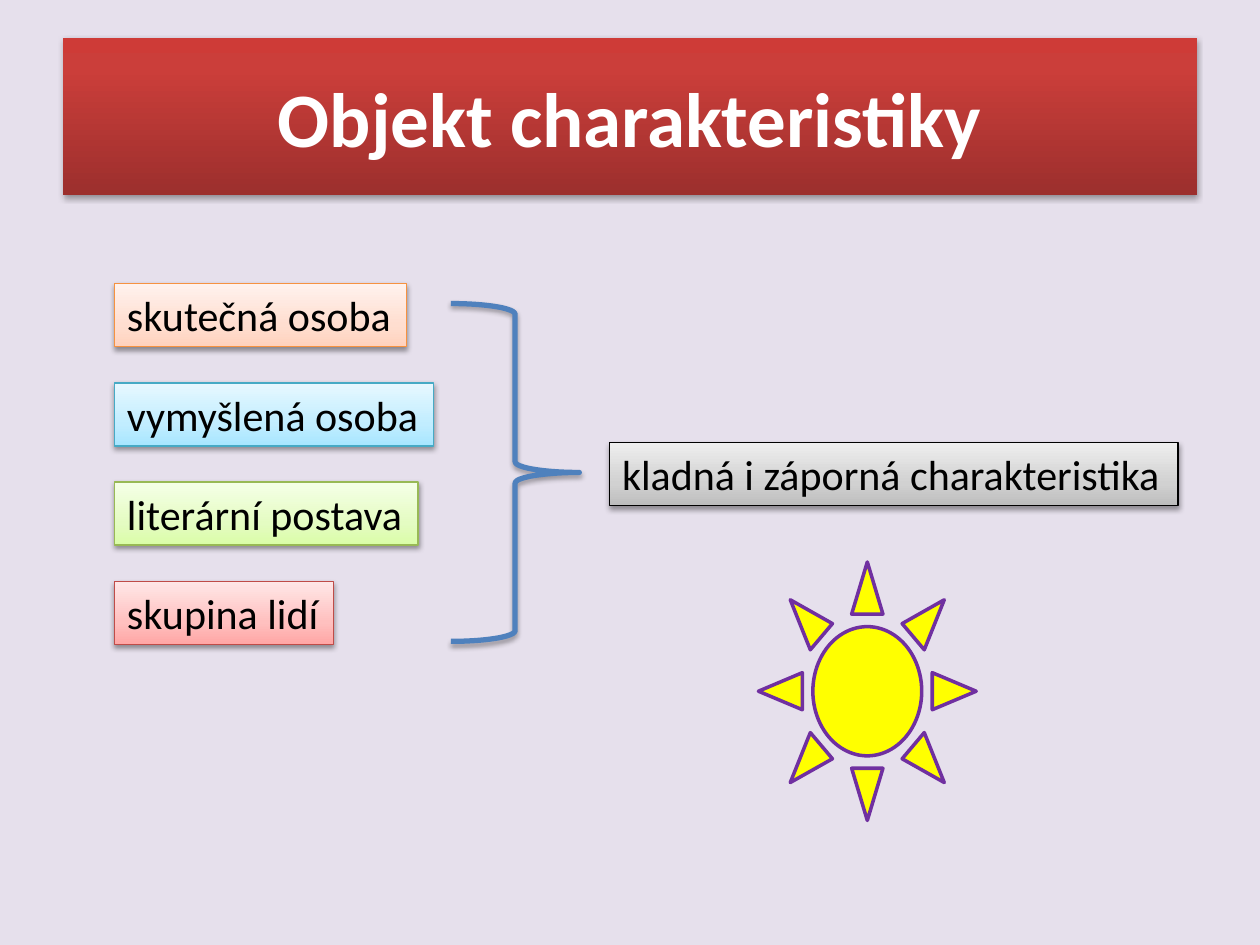
from dataclasses import dataclass

from lxml.etree import SubElement
from pptx import Presentation
from pptx.dml.color import RGBColor
from pptx.enum.shapes import MSO_SHAPE as SHAPE
from pptx.enum.text import MSO_ANCHOR as ANCHOR, MSO_AUTO_SIZE as AUTO, PP_ALIGN as ALIGN
from pptx.oxml.ns import qn
from pptx.util import Cm, Pt

LABEL_HEIGHT = 1.27
LABEL_LEFT, LABEL_TOP, LABEL_STEP = 2.31, 5.72, 2.0


@dataclass(frozen=True)
class Label:
    text: str
    width: float
    gradient: tuple[str, str, str]
    line: str


SUBJECTS = [
    Label("skutečná osoba", 5.89, ("FFD2BD", "FFDED0", "FFF2ED"), "F69240"),
    Label("vymyšlená osoba", 6.43, ("A7E6FF", "C1EDFF", "E7F8FF"), "46AAC5"),
    Label("literární postava", 6.12, ("DAFDA7", "E4FCC2", "F5FFE7"), "98B955"),
    Label("skupina lidí", 4.42, ("FFA6A5", "FFC0BF", "FFE7E7"), "BF4C48"),
]
CONCLUSION = Label("kladná i záporná charakteristika", 11.46,
                   ("BDBDBD", "D1D1D1", "EEEEEE"), "000000")


def rgb(value: str) -> RGBColor:
    return RGBColor.from_string(value)


def add_shape(s, kind, left: float, top: float, width: float, height: float,
              line: str | None = None, weight: float = 0.75):
    sp = s.shapes.add_shape(kind, Cm(left), Cm(top), Cm(width), Cm(height))
    sp.shadow.inherit = False
    if line:
        sp.line.color.rgb = rgb(line)
        sp.line.width = Pt(weight)
    else:
        sp.line.fill.background()
    return sp


def fill_gradient(sp, colors: tuple[str, str, str], middle: int) -> None:
    """Fill upwards with three colours, the second one at middle percent."""
    sp.fill.gradient()
    sp.fill.gradient_angle = 90
    stops = sp._element.spPr.find(qn("a:gradFill")).find(qn("a:gsLst"))
    for stop in list(stops):
        stops.remove(stop)
    for position, color in zip((0, middle, 100), colors):
        stop = SubElement(stops, qn("a:gs"), pos=str(position * 1000))
        SubElement(stop, qn("a:srgbClr"), val=color)


def add_shadow(sp, opacity: int, distance: float) -> None:
    effects = sp._element.spPr.find(qn("a:effectLst"))
    shadow = SubElement(effects, qn("a:outerShdw"), blurRad=str(Pt(3.1)),
                        dist=str(Pt(distance)), dir="5400000", rotWithShape="0")
    color = SubElement(shadow, qn("a:srgbClr"), val="000000")
    SubElement(color, qn("a:alpha"), val=str(opacity * 1000))


def write(sp, text: str, *, size: float = 24, color: str = "000000", bold: bool = False,
          align=ALIGN.LEFT, anchor=ANCHOR.TOP, wrap: bool = False, auto=AUTO.SHAPE_TO_FIT_TEXT):
    tf = sp.text_frame
    tf.word_wrap = wrap
    tf.auto_size = auto
    tf.vertical_anchor = anchor
    p = tf.paragraphs[0]
    p.alignment = align
    r = p.add_run()
    r.text = text
    r.font.name = "Calibri"
    r.font.size = Pt(size)
    r.font.bold = bold
    r.font.color.rgb = rgb(color)


def add_label(s, label: Label, left: float, top: float) -> None:
    sp = add_shape(s, SHAPE.RECTANGLE, left, top, label.width, LABEL_HEIGHT, label.line)
    fill_gradient(sp, label.gradient, 35)
    add_shadow(sp, 38, 1.6)
    write(sp, label.text)


def main() -> None:
    prs = Presentation()
    prs.slide_width, prs.slide_height = Cm(25.4), Cm(19.05)
    s = prs.slides.add_slide(prs.slide_layouts[6])
    s.background.fill.solid()
    s.background.fill.fore_color.rgb = rgb("E6E0EC")

    title = add_shape(s, SHAPE.RECTANGLE, 1.27, 0.76, 22.86, 3.18)
    fill_gradient(title, ("9C2F2D", "CB3E3A", "CE3B37"), 80)
    add_shadow(title, 35, 1.8)
    write(title, "Objekt charakteristiky", size=44, color="FFFFFF", bold=True,
          align=ALIGN.CENTER, anchor=ANCHOR.MIDDLE, wrap=True, auto=AUTO.NONE)

    brace = add_shape(s, SHAPE.RIGHT_BRACE, 9.09, 6.12, 2.59, 6.81, "4F81BD", 3)
    brace.fill.background()
    add_shadow(brace, 35, 1.8)

    add_label(s, CONCLUSION, 12.29, 8.92)
    for i, label in enumerate(SUBJECTS):
        add_label(s, label, LABEL_LEFT, LABEL_TOP + i * LABEL_STEP)

    sun = add_shape(s, SHAPE.SUN, 15.29, 11.33, 4.39, 5.21, "7030A0", 2)
    sun.fill.solid()
    sun.fill.fore_color.rgb = rgb("FFFF00")

    prs.save("out.pptx")


if __name__ == "__main__":
    main()
